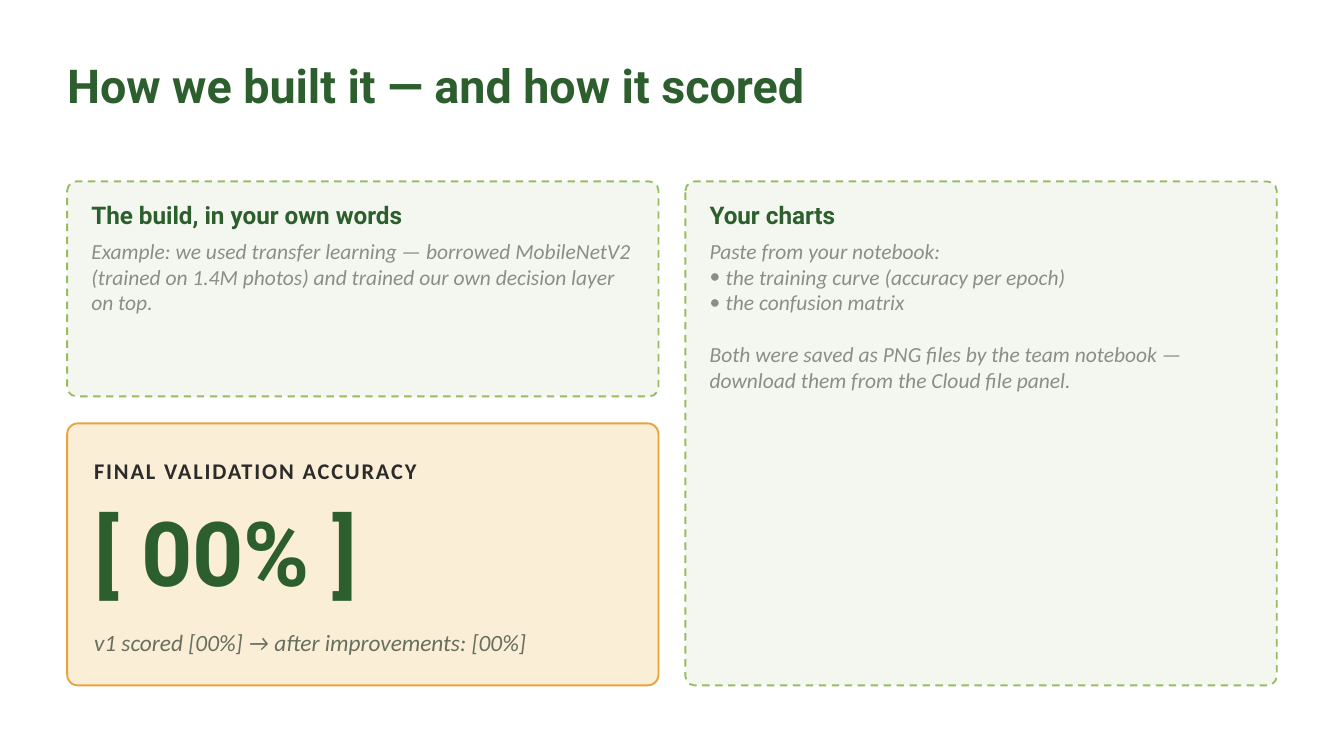
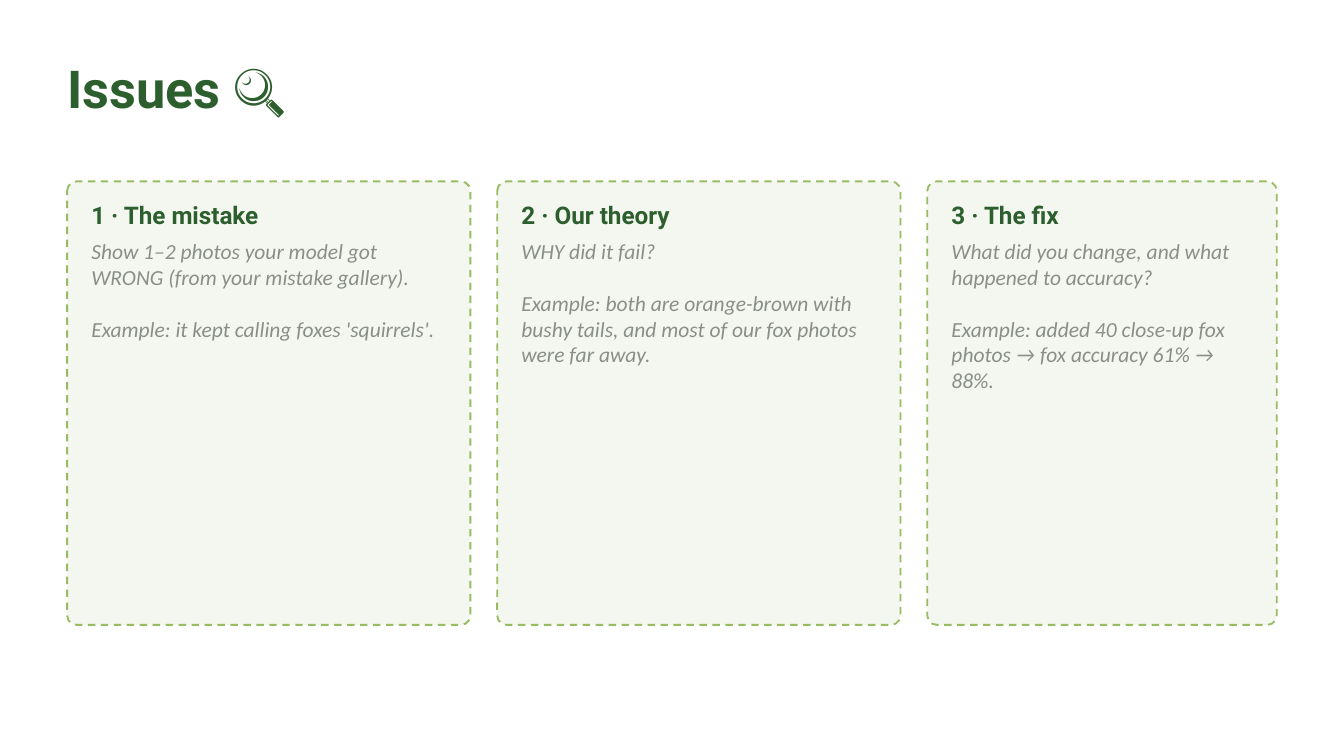
from dataclasses import dataclass

from lxml.etree import SubElement
from pptx import Presentation
from pptx.dml.color import RGBColor
from pptx.enum.dml import MSO_LINE
from pptx.enum.shapes import MSO_SHAPE
from pptx.enum.text import MSO_ANCHOR
from pptx.oxml.ns import qn
from pptx.util import Pt

SCALE = 9144


def px(count):
    """Turn px, a hundred to the inch, into EMU."""
    return round(count * SCALE)


def look(name, size, color, **extra):
    """Describe a type style as font values."""
    return {"name": name, "size": Pt(size), "color": color, **extra}


@dataclass(frozen=True)
class Theme:
    """Hold the colours, type styles and spacing of the deck."""
    green = "2C5F2D"
    leaf = "97BC62"
    mist = "F4F7EF"
    cream = "FBEED7"
    amber = "E8A33D"
    title = look("Roboto", 25, green, bold=True)
    large = look("Roboto", 28, green, bold=True)
    head = look("Roboto", 13, green, bold=True)
    body = look("Calibri", 11.5, "8A8F86", italic=True)
    label = look("Calibri", 12, "2B2B2B", bold=True)
    score = look("Roboto", 48, green, bold=True)
    note = look("Calibri", 12.5, "67705F", italic=True)
    left, top, width, gap = 50, 135, 900, 20
    blank = Pt(14)
    indent = 12


THEME = Theme()


def style(font, values):
    """Give a font its values."""
    for key, value in values.items():
        if key == "color":
            font.color.rgb = RGBColor.from_string(value)
        else:
            setattr(font, key, value)


def bullet(para, face):
    """Make a paragraph a list item with a hanging dot."""
    props = para._p.get_or_add_pPr()
    props.set("marL", str(px(THEME.indent)))
    props.set("indent", str(-px(THEME.indent)))
    SubElement(props, qn("a:buFont")).set("typeface", face)
    SubElement(props, qn("a:buChar")).set("char", "•")


def write(slide, box, lines, values, anchor=MSO_ANCHOR.MIDDLE, track=0):
    """Place lines of text, each a (kind, text) pair, in a box."""
    frame = slide.shapes.add_textbox(*map(px, box)).text_frame
    for key in ("left", "top", "right", "bottom"):
        setattr(frame, f"margin_{key}", 0)
    frame.word_wrap = True
    frame.vertical_anchor = anchor
    for index, (kind, text) in enumerate(lines):
        para = frame.add_paragraph() if index else frame.paragraphs[0]
        if kind == "item":
            bullet(para, values["name"])
        if kind == "gap":
            para.space_before = THEME.blank
        run = para.add_run()
        run.text = text
        style(run.font, values)
        if track:
            run._r.get_or_add_rPr().set("spc", str(track))


def panel(slide, box, fill, edge, radius, dash=None):
    """Draw a rounded panel with a thin outline."""
    shape = slide.shapes.add_shape(MSO_SHAPE.ROUNDED_RECTANGLE, *map(px, box))
    shape.shadow.inherit = False
    shape.adjustments[0] = radius / min(box[2:])
    shape.fill.solid()
    shape.fill.fore_color.rgb = RGBColor.from_string(fill)
    shape.line.color.rgb = RGBColor.from_string(edge)
    shape.line.width = Pt(1)
    shape.line.dash_style = dash


def title(slide, text, values):
    """Write the slide title."""
    box = (THEME.left, 42, THEME.width, 95)
    write(slide, box, [("text", text)], values, MSO_ANCHOR.TOP)


def card(slide, box, head, lines):
    """Draw a dashed card with a heading and body text."""
    left, top, width, height = box
    start, span = left + 18, width - 36
    panel(slide, box, THEME.mist, THEME.leaf, 7, MSO_LINE.DASH)
    write(slide, (start, top + 10, span, 30), [("text", head)], THEME.head)
    write(slide, (start, top + 42, span, height - 55), lines,
          THEME.body, MSO_ANCHOR.TOP)


def score(slide, box):
    """Draw the accuracy panel."""
    left, top, width, _ = box
    panel(slide, box, THEME.cream, THEME.amber, 8)
    rows = (
        (20, 30, "FINAL VALIDATION ACCURACY", THEME.label, 100),
        (50, 90, "[ 00% ]", THEME.score, 0),
        (145, 35, "v1 scored [00%] → after improvements: [00%]", THEME.note, 0),
    )
    for drop, height, text, values, track in rows:
        spot = (left + 20, top + drop, width - 40, height)
        write(slide, spot, [("text", text)], values, track=track)


def build(slide):
    """Compose the slide on method and score."""
    title(slide, "How we built it — and how it scored", THEME.title)
    wide = (THEME.width - THEME.gap) // 2
    tall, high = 375, 160
    low = high + THEME.gap
    card(slide, (THEME.left, THEME.top, wide, high), "The build, in your own words", [
        ("text", "Example: we used transfer learning — borrowed MobileNetV2 "
                 "(trained on 1.4M photos) and trained our own decision layer on top."),
    ])
    score(slide, (THEME.left, THEME.top + low, wide, tall - low))
    card(slide, (THEME.left + wide + THEME.gap, THEME.top, wide, tall), "Your charts", [
        ("text", "Paste from your notebook:"),
        ("item", "the training curve (accuracy per epoch)"),
        ("item", "the confusion matrix"),
        ("gap", "Both were saved as PNG files by the team notebook — "
                "download them from the Cloud file panel."),
    ])


def issues(slide):
    """Compose the slide of three issue cards."""
    title(slide, "Issues 🔍", THEME.large)
    cards = (
        (300, "1 · The mistake",
         "Show 1–2 photos your model got WRONG (from your mistake gallery).",
         "Example: it kept calling foxes 'squirrels'."),
        (300, "2 · Our theory", "WHY did it fail?",
         "Example: both are orange-brown with bushy tails, and most of our "
         "fox photos were far away."),
        (260, "3 · The fix", "What did you change, and what happened to accuracy?",
         "Example: added 40 close-up fox photos → fox accuracy 61% → 88%."),
    )
    left = THEME.left
    for width, head, prompt, sample in cards:
        card(slide, (left, THEME.top, width, 330), head,
             [("text", prompt), ("gap", sample)])
        left += width + THEME.gap


def main():
    """Build the deck and save it."""
    deck = Presentation()
    deck.slide_width = px(1000)
    deck.slide_height = deck.slide_width * 9 // 16
    for fill in (build, issues):
        fill(deck.slides.add_slide(deck.slide_layouts[6]))
    deck.save("out.pptx")


if __name__ == "__main__":
    main()
